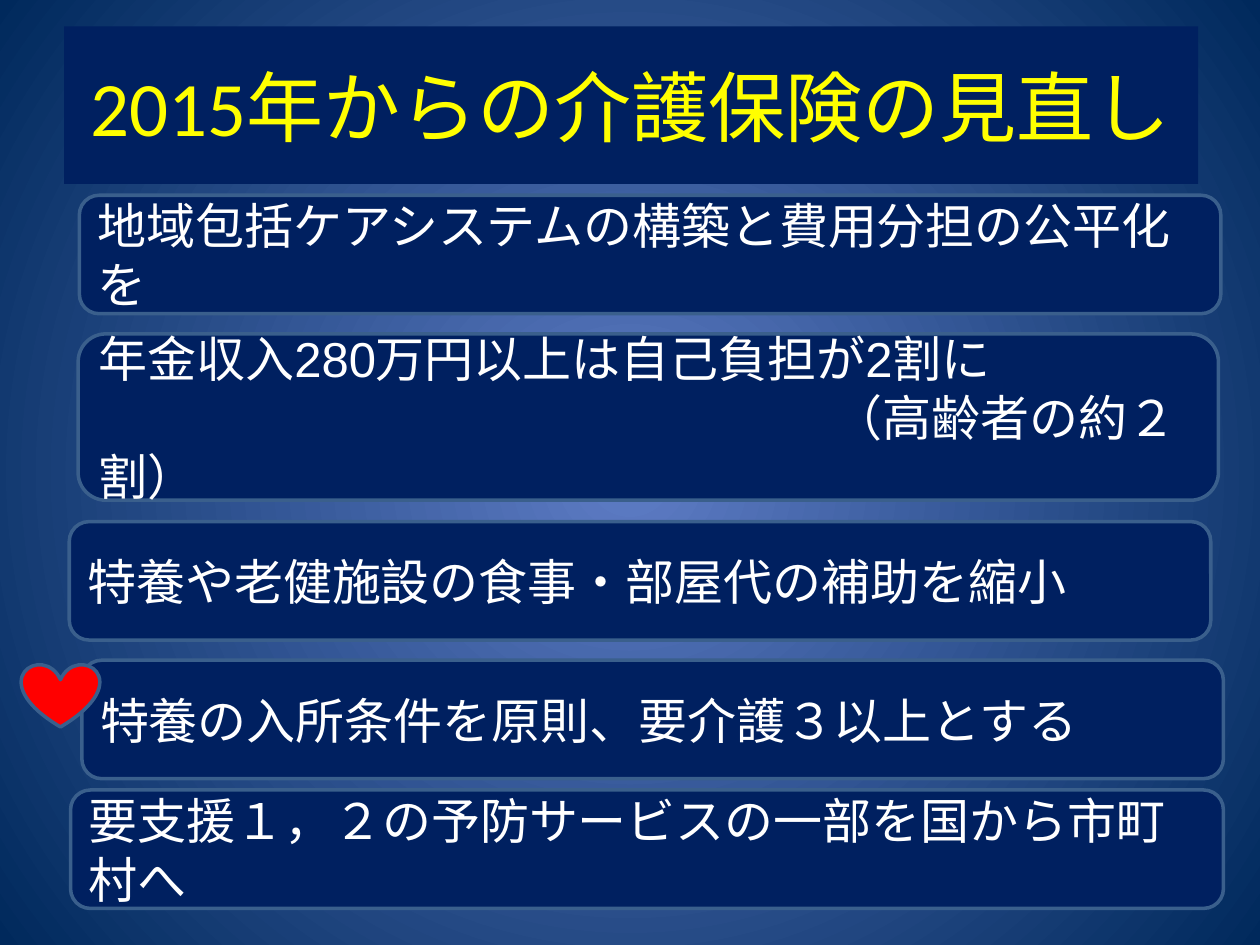
from dataclasses import dataclass

from lxml.etree import SubElement
from pptx import Presentation
from pptx.dml.color import RGBColor
from pptx.enum.shapes import MSO_SHAPE
from pptx.enum.text import MSO_ANCHOR, PP_ALIGN
from pptx.oxml.ns import qn
from pptx.util import Inches, Pt


@dataclass(frozen=True)
class Theme:
    navy: RGBColor = RGBColor(0x00, 0x20, 0x60)
    outline: RGBColor = RGBColor(0x3A, 0x5F, 0x8C)
    yellow: RGBColor = RGBColor(0xFF, 0xFF, 0x00)
    white: RGBColor = RGBColor(0xFF, 0xFF, 0xFF)
    red: RGBColor = RGBColor(0xFF, 0x00, 0x00)
    glow: RGBColor = RGBColor(0x5E, 0x7C, 0xC5)
    edge: RGBColor = RGBColor(0x00, 0x29, 0x5C)
    title_font: str = "Calibri"
    body_font: str = "Arial"
    title_size: Pt = Pt(44)
    body_size: Pt = Pt(28)
    outline_width: Pt = Pt(2)


THEME = Theme()

TITLE = "2015年からの介護保険の見直し"
TITLE_BOX = (0.51, 0.21, 9, 1.25)
HEART_BOX = (0.17, 5.27, 0.62, 0.5)
# Each reform: box, then its lines as (text, first-line indent in characters)
REFORMS = [
    ((0.63, 1.55, 9.06, 0.94),
     [("地域包括ケアシステムの構築と費用分担の公平化を", 0)]),
    ((0.62, 2.65, 9.05, 1.32),
     [("年金収入280万円以上は自己負担が2割に", 0), ("（高齢者の約２割）", 15)]),
    ((0.55, 4.14, 9.06, 0.94),
     [("特養や老健施設の食事・部屋代の補助を縮小", 0)]),
    ((0.65, 5.24, 9.06, 0.94),
     [("特養の入所条件を原則、要介護３以上とする", 0)]),
    ((0.56, 6.27, 9.15, 0.94),
     [("要支援１，２の予防サービスの一部を国から市町村へ", 0)]),
]


def paint_background(slide):
    """Radial gradient, bright in the centre."""
    fill = slide.background.fill
    fill.gradient()
    for stop, color, position in zip(
            fill.gradient_stops, (THEME.glow, THEME.edge), (0, 1)):
        stop.color.rgb = color
        stop.position = position
    gradient = next(slide.element.iter(qn("a:gradFill")))
    gradient.remove(gradient.find(qn("a:lin")))
    circle = SubElement(gradient, qn("a:path"), path="circle")
    SubElement(circle, qn("a:fillToRect"),
               {side: "50000" for side in ("l", "t", "r", "b")})


def add_panel(slide, kind, box, color, outlined=True):
    panel = slide.shapes.add_shape(kind, *(Inches(length) for length in box))
    panel.shadow.inherit = False
    panel.fill.solid()
    panel.fill.fore_color.rgb = color
    if outlined:
        panel.line.color.rgb = THEME.outline
        panel.line.width = THEME.outline_width
    else:
        panel.line.fill.background()
    return panel


def write_line(paragraph, text, font_name, size, color, align):
    paragraph.alignment = align
    run = paragraph.add_run()
    run.text = text
    run.font.name = font_name
    run.font.size = size
    run.font.color.rgb = color


def add_title(slide, box):
    banner = add_panel(slide, MSO_SHAPE.RECTANGLE, box, THEME.navy, outlined=False)
    banner.text_frame.vertical_anchor = MSO_ANCHOR.MIDDLE
    write_line(banner.text_frame.paragraphs[0], TITLE, THEME.title_font,
               THEME.title_size, THEME.yellow, PP_ALIGN.CENTER)


def add_reform(slide, box, lines):
    card = add_panel(slide, MSO_SHAPE.ROUNDED_RECTANGLE, box, THEME.navy)
    frame = card.text_frame
    frame.word_wrap = True
    frame.vertical_anchor = MSO_ANCHOR.MIDDLE
    for number, (text, indent) in enumerate(lines):
        paragraph = frame.add_paragraph() if number else frame.paragraphs[0]
        write_line(paragraph, text, THEME.body_font, THEME.body_size,
                   THEME.white, PP_ALIGN.LEFT)
        if indent:
            properties = paragraph._p.get_or_add_pPr()
            properties.set("marL", "0")
            properties.set("indent", str(indent * THEME.body_size))


def main():
    deck = Presentation()
    deck.slide_width, deck.slide_height = Inches(10), Inches(7.5)
    slide = deck.slides.add_slide(deck.slide_layouts[6])
    paint_background(slide)
    add_title(slide, TITLE_BOX)
    for box, lines in REFORMS:
        add_reform(slide, box, lines)
    add_panel(slide, MSO_SHAPE.HEART, HEART_BOX, THEME.red)
    deck.save("out.pptx")


if __name__ == "__main__":
    main()
